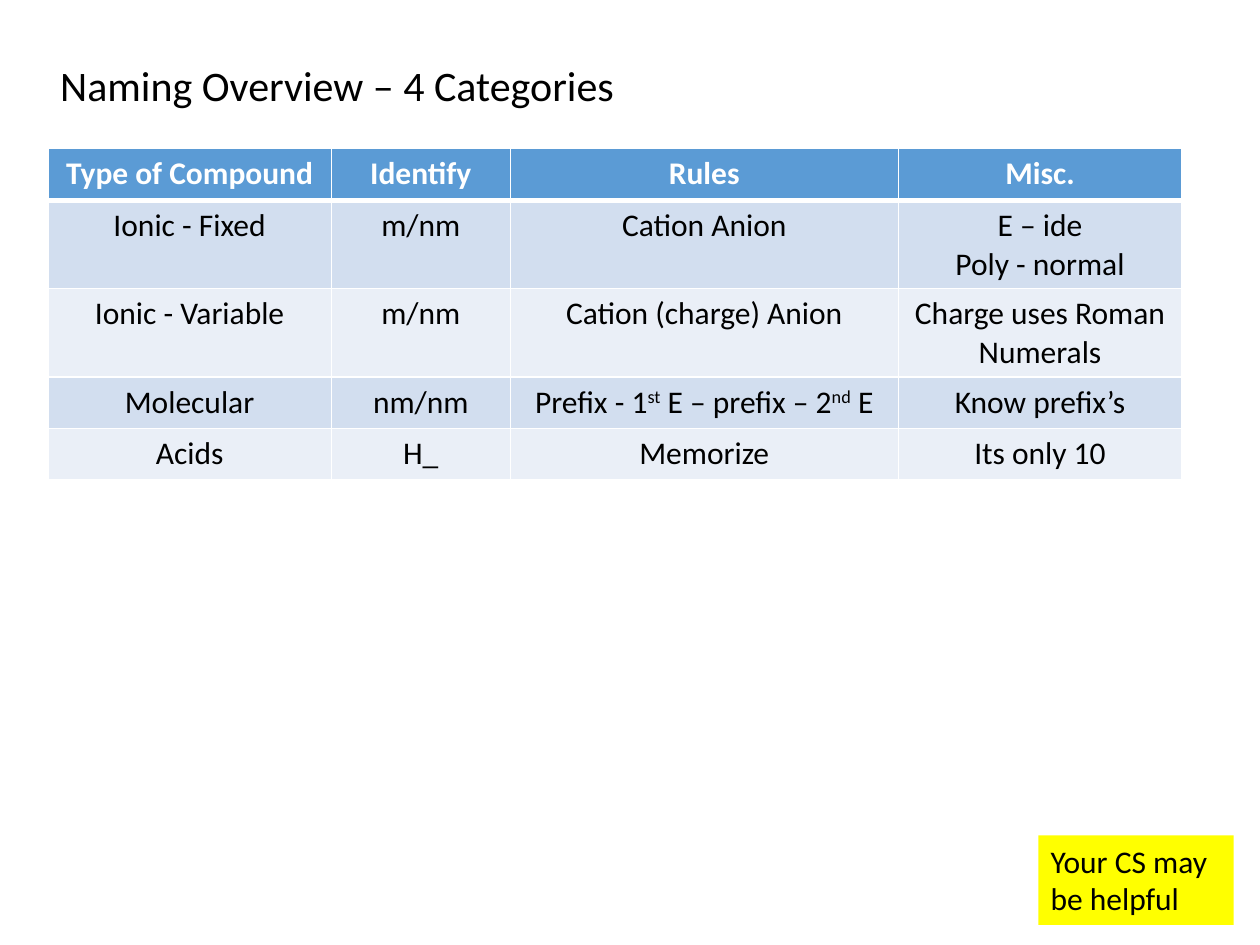
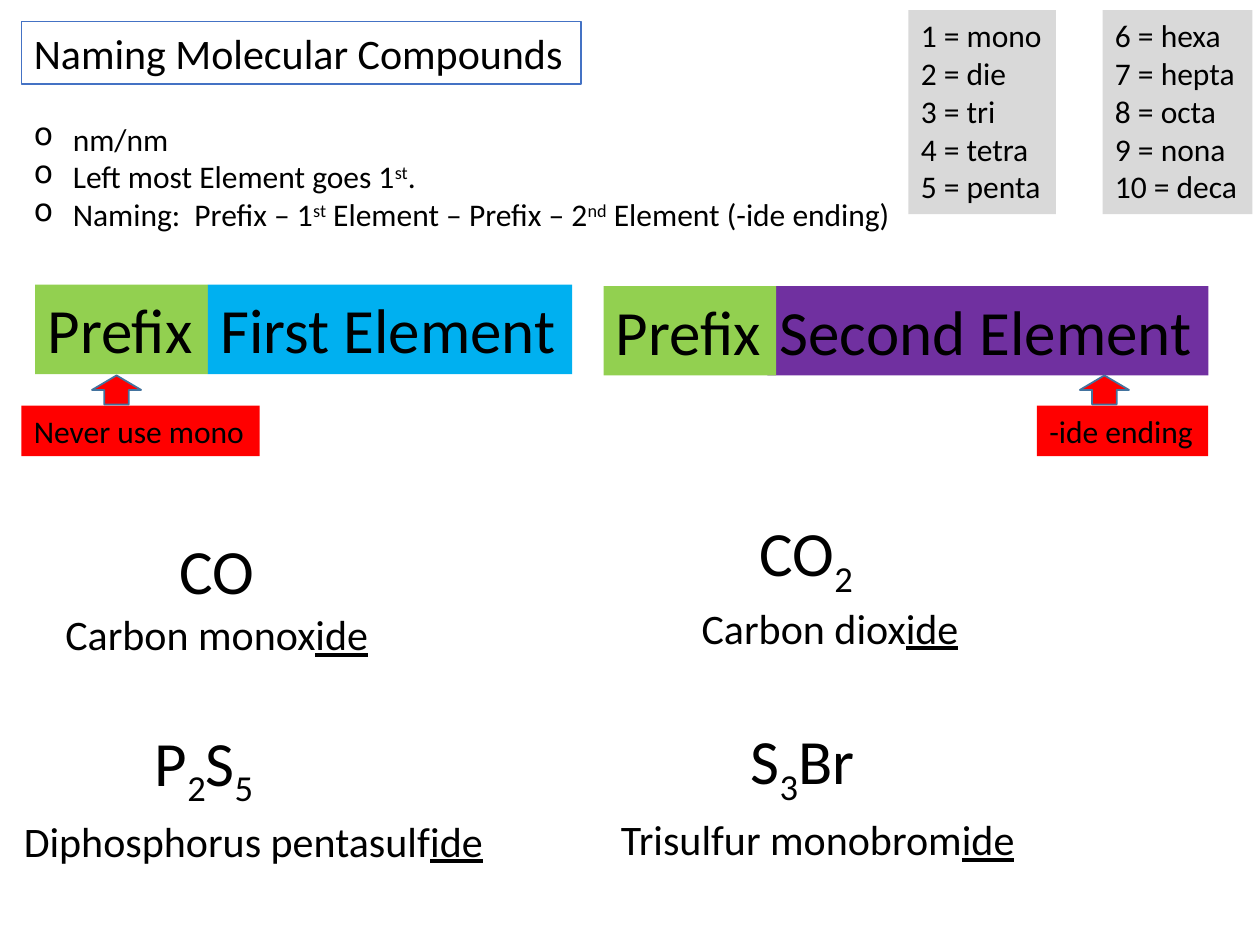
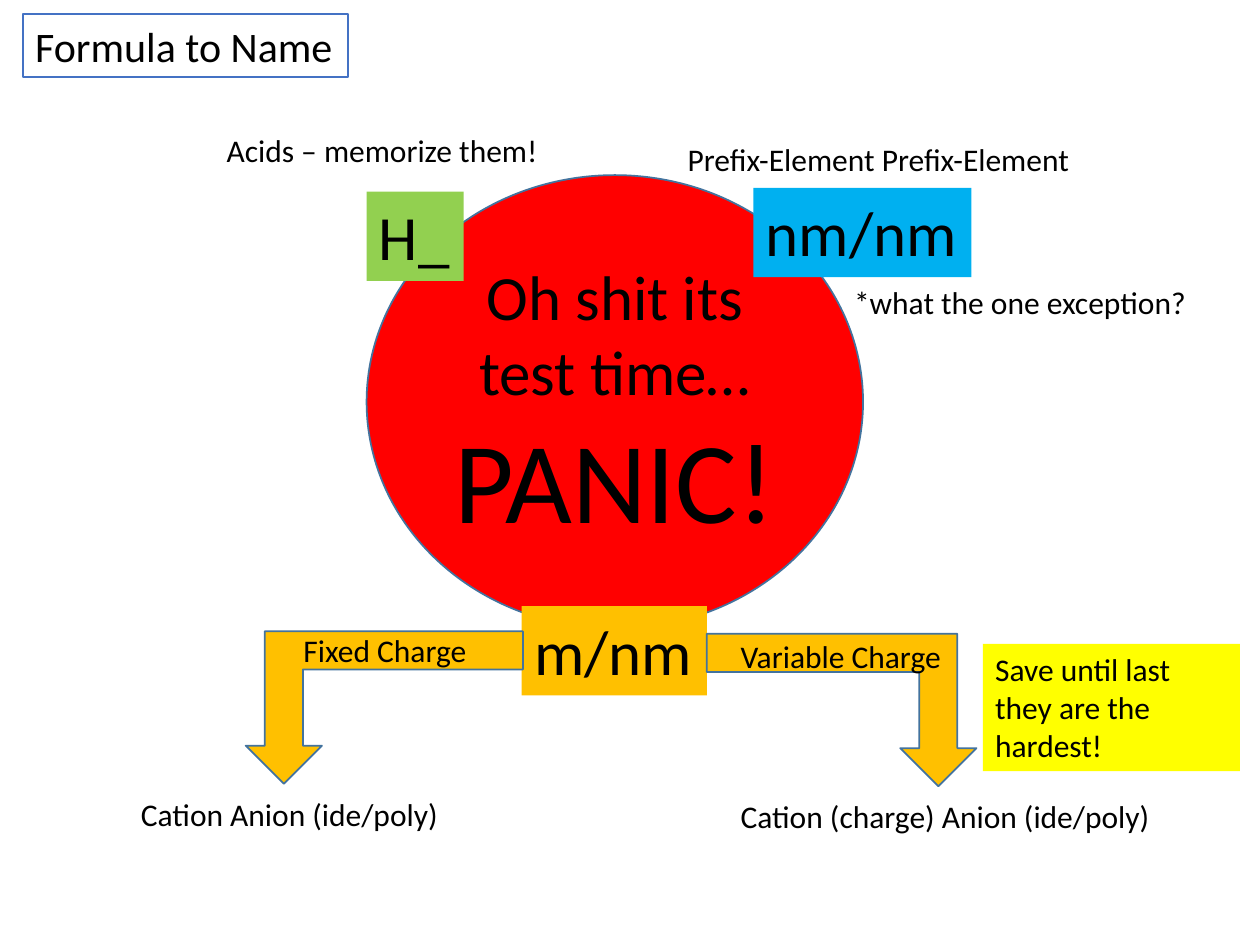
from pptx import Presentation
from pptx.dml.color import RGBColor
from pptx.enum.shapes import MSO_SHAPE
from pptx.enum.text import MSO_ANCHOR, MSO_AUTO_SIZE, PP_ALIGN
from pptx.oxml import parse_xml
from pptx.oxml.ns import nsdecls
from pptx.util import Inches, Pt

FONT = "Calibri"
COLORS = {
    "black": "000000", "white": "FFFFFF", "yellow": "FFFF00", "red": "FF0000",
    "green": "92D050", "sky": "00B0F0", "purple": "7030A0", "gold": "FFC000",
    "grey": "D9D9D9", "title_line": "4472C4", "shape_line": "43739E",
    "header": "5B9BD5", "band_dark": "D2DEEF", "band_light": "EAEFF7",
}
SMALL, MEDIUM, LARGE, HUGE = 18, 24, 36, 66
LINE_H = {SMALL: 0.4, MEDIUM: 0.5, LARGE: 0.71}
# Paired marks in a text: superscript, subscript, underline, huge
MARKS = "^~|#"


def rgb(name):
    return RGBColor.from_string(COLORS[name])


def add_run(p, text, mark, size, color, bold):
    r = p.add_run()
    r.text = text
    r.font.name = FONT
    r.font.size = Pt(HUGE if mark == "#" else size)
    r.font.color.rgb = rgb(color)
    r.font.bold = bold
    if mark == "|":
        r.font.underline = True
    elif mark in ("^", "~"):
        r.font._element.set("baseline", "30000" if mark == "^" else "-25000")


def write(tf, text, size=SMALL, color="black", bold=False, align=None, bullet=None):
    """Fill a text frame, one paragraph per line of the marked text."""
    for i, line in enumerate(text.split("\n")):
        p = tf.paragraphs[0] if i == 0 else tf.add_paragraph()
        p.alignment = align
        mark, part = None, ""
        for ch in line:
            if ch in MARKS:
                if part:
                    add_run(p, part, mark, size, color, bold)
                mark, part = (None if mark else ch), ""
            else:
                part += ch
        if part:
            add_run(p, part, mark, size, color, bold)
        if bullet:
            pPr = p._p.get_or_add_pPr()
            pPr.set("marL", str(Inches(0.31)))
            pPr.set("indent", str(-Inches(0.31)))
            pPr.append(parse_xml(f'<a:buChar {nsdecls("a")} char="{bullet}"/>'))


def add_shape(slide, kind, x, y, w, h, fill, line=None):
    sp = slide.shapes.add_shape(kind, Inches(x), Inches(y), Inches(w), Inches(h))
    sp.shadow.inherit = False
    sp.fill.solid()
    sp.fill.fore_color.rgb = rgb(fill)
    if line:
        sp.line.color.rgb = rgb(line)
        sp.line.width = Pt(1)
    else:
        sp.line.fill.background()
    return sp


def add_label(slide, x, y, w, text, size=SMALL, h=None, fill=None, line=None,
              wrap=False, bullet=None):
    """Left-aligned text, on a filled rectangle when a fill is given."""
    h = h or LINE_H[size]
    if fill:
        sp = add_shape(slide, MSO_SHAPE.RECTANGLE, x, y, w, h, fill, line)
    else:
        sp = slide.shapes.add_textbox(Inches(x), Inches(y), Inches(w), Inches(h))
    tf = sp.text_frame
    tf.word_wrap = wrap
    tf.auto_size = MSO_AUTO_SIZE.SHAPE_TO_FIT_TEXT
    tf.vertical_anchor = MSO_ANCHOR.TOP
    write(tf, text, size, align=PP_ALIGN.LEFT, bullet=bullet)


def add_title(slide, x, y, w, text):
    add_label(slide, x, y, w, text, MEDIUM, fill="white", line="title_line")


def add_bent_arrow(slide, x, y, w, flip=False):
    sp = add_shape(slide, MSO_SHAPE.BENT_UP_ARROW, x, y, w, 1.21, "gold", "shape_line")
    sp.rotation = 180
    if flip:
        sp._element.spPr.xfrm.set("flipH", "1")


def set_borders(cell, top, bottom):
    tcPr = cell._tc.get_or_add_tcPr()
    for side, width in (("L", 1), ("R", 1), ("T", top), ("B", bottom)):
        tcPr.append(parse_xml(
            f'<a:ln{side} {nsdecls("a")} w="{Pt(width)}"><a:solidFill>'
            f'<a:srgbClr val="{COLORS["white"]}"/></a:solidFill></a:ln{side}>'))


def add_banded_table(slide, x, y, widths, heights, rows):
    table = slide.shapes.add_table(
        len(rows), len(widths), Inches(x), Inches(y),
        Inches(sum(widths)), Inches(sum(heights))).table
    for col, w in zip(table.columns, widths):
        col.width = Inches(w)
    for i, (row, h) in enumerate(zip(rows, heights)):
        table.rows[i].height = Inches(h)
        head = i == 0
        fill = "header" if head else "band_dark" if i % 2 else "band_light"
        for j, text in enumerate(row):
            cell = table.cell(i, j)
            set_borders(cell, top=3 if i == 1 else 1, bottom=3 if head else 1)
            cell.fill.solid()
            cell.fill.fore_color.rgb = rgb(fill)
            write(cell.text_frame, text, color="white" if head else "black",
                  bold=head, align=PP_ALIGN.CENTER)


def overview_slide(slide):
    add_label(slide, 0.38, 0.42, 4.64, "Naming Overview – 4 Categories", MEDIUM)
    add_banded_table(
        slide, 0.38, 1.18, [2.25, 1.42, 3.08, 2.25], [0.41, 0.7, 0.7, 0.41, 0.41], [
            ["Type of Compound", "Identify", "Rules", "Misc."],
            ["Ionic - Fixed", "m/nm", "Cation Anion", "E – ide\nPoly - normal"],
            ["Ionic - Variable", "m/nm", "Cation (charge) Anion",
             "Charge uses Roman Numerals"],
            ["Molecular", "nm/nm", "Prefix - 1^st^ E – prefix – 2^nd^ E",
             "Know prefix’s"],
            ["Acids", "H_", "Memorize", "Its only 10"],
        ])
    add_label(slide, 8.24, 6.63, 1.55, "Your CS may be helpful", h=0.71,
              fill="yellow", wrap=True)


def molecular_slide(slide):
    add_title(slide, 0.17, 0.17, 4.44, "Naming Molecular Compounds")
    add_label(slide, 0.17, 0.9, 7.5,
              "nm/nm\nLeft most Element goes 1^st^.\n"
              "Naming:  Prefix – 1^st^ Element – Prefix – 2^nd^ Element (-ide ending)",
              h=1.01, wrap=True, bullet="o")

    # Name pattern
    for x, y, w, text, fill in [
        (0.28, 2.26, 1.37, "Prefix", "green"),
        (1.65, 2.26, 2.89, "First Element", "sky"),
        (6.09, 2.27, 3.5, "Second Element", "purple"),
        (4.79, 2.27, 1.37, "Prefix", "green"),
    ]:
        add_label(slide, x, y, w, text, LARGE, fill=fill)

    # Warnings with their arrows
    for x, w, text, arrow_x in [(0.17, 1.89, "Never use mono", 0.73),
                                (8.23, 1.36, "-ide ending", 8.57)]:
        add_label(slide, x, 3.22, w, text, fill="red")
        add_shape(slide, MSO_SHAPE.UP_ARROW, arrow_x, 2.98, 0.39, 0.23,
                  "red", "shape_line")

    # Prefix lists
    for x, w, first, prefixes in [
        (7.21, 1.17, 1, ["mono", "die", "tri", "tetra", "penta"]),
        (8.75, 1.19, 6, ["hexa", "hepta", "octa", "nona", "deca"]),
    ]:
        text = "\n".join(f"{n} = {name}" for n, name in enumerate(prefixes, first))
        add_label(slide, x, 0.08, w, text, h=1.62, fill="grey")

    # Examples: formula, then name
    for formula, name in [
        ((1.33, 4.17, 0.8, "CO"), (0.42, 4.78, 2.63, "Carbon monox|ide|")),
        ((5.93, 4.03, 0.97, "CO~2~"), (5.47, 4.73, 2.26, "Carbon diox|ide|")),
        ((1.13, 5.69, 1.03, "P~2~S~5~"),
         (0.09, 6.42, 3.88, "Diphosphorus pentasulf|ide|")),
        ((5.86, 5.68, 1.05, "S~3~Br"), (4.83, 6.41, 3.43, "Trisulfur monobrom|ide|")),
    ]:
        add_label(slide, *formula, LARGE)
        add_label(slide, *name, MEDIUM)


def formula_slide(slide):
    # Central circle
    circle = add_shape(slide, MSO_SHAPE.OVAL, 2.91, 1.39, 3.94, 3.6, "red", "shape_line")
    tf = circle.text_frame
    tf.word_wrap = True
    tf.vertical_anchor = MSO_ANCHOR.MIDDLE
    write(tf, "Oh shit its test time… #PANIC!#", LARGE, align=PP_ALIGN.CENTER)
    add_title(slide, 0.18, 0.11, 2.58, "Formula to Name")

    # Compound types
    for x, y, w, text, fill in [
        (4.14, 4.81, 1.47, "m/nm", "gold"),
        (2.91, 1.52, 0.77, "H_", "green"),
        (5.98, 1.49, 1.73, "nm/nm", "sky"),
    ]:
        add_label(slide, x, y, w, text, LARGE, fill=fill)

    # Branches for the ionic compounds
    add_bent_arrow(slide, 1.95, 5.01, 2.2)
    add_bent_arrow(slide, 5.61, 5.03, 2.14, flip=True)

    # Rules
    for x, y, w, text in [
        (1.7, 0.99, 2.7, "Acids – memorize them!"),
        (5.36, 1.06, 3.26, "Prefix-Element Prefix-Element"),
        (2.31, 4.96, 1.51, "Fixed Charge"),
        (1.02, 6.26, 2.59, "Cation Anion (ide/poly)"),
        (5.78, 6.28, 3.49, "Cation (charge) Anion (ide/poly)"),
        (5.78, 5.01, 1.81, "Variable Charge"),
        (6.68, 2.2, 2.87, "*what the one exception?"),
    ]:
        add_label(slide, x, y, w, text)
    add_label(slide, 7.8, 5.11, 2.04, "Save until last they are the hardest!",
              h=1.01, fill="yellow", wrap=True)


def main():
    prs = Presentation()
    prs.slide_width, prs.slide_height = Inches(10), Inches(7.5)
    for build in (overview_slide, molecular_slide, formula_slide):
        build(prs.slides.add_slide(prs.slide_layouts[6]))
    prs.save("out.pptx")


if __name__ == "__main__":
    main()
